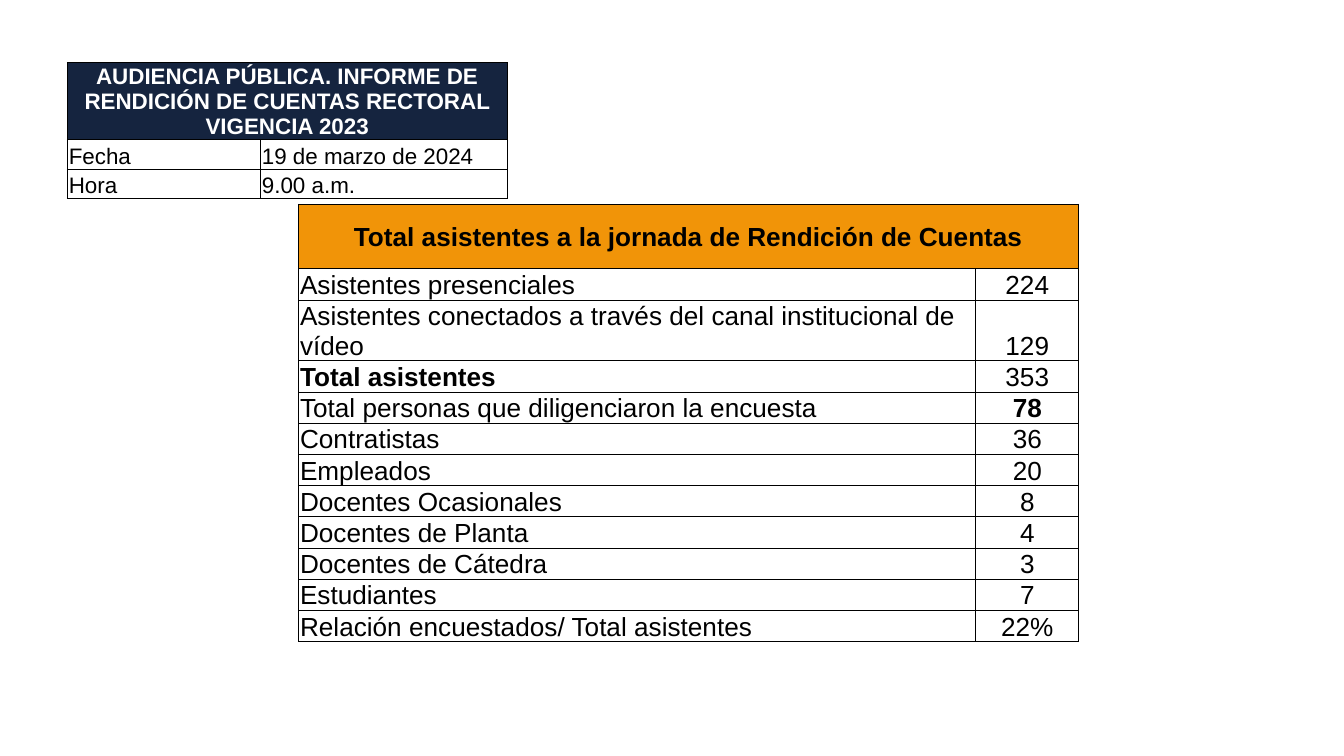
from lxml.etree import SubElement
from pptx import Presentation
from pptx.dml.color import RGBColor
from pptx.enum.text import MSO_ANCHOR, PP_ALIGN
from pptx.oxml.ns import qn
from pptx.util import Cm, Pt

COLORS = {"navy": "15243F", "orange": "F19408", "black": "000000", "white": "FFFFFF"}

ATTENDANCE = {
    "title": "Total asistentes a la jornada de Rendición de Cuentas",
    "rows": [
        ("Asistentes presenciales", "224"),
        ("Asistentes conectados a través del canal institucional de vídeo", "129"),
        ("Total asistentes", "353"),
        ("Total personas que diligenciaron la encuesta", "78"),
        ("Contratistas", "36"),
        ("Empleados", "20"),
        ("Docentes Ocasionales", "8"),
        ("Docentes de Planta", "4"),
        ("Docentes de Cátedra", "3"),
        ("Estudiantes", "7"),
        ("Relación encuestados/ Total asistentes", "22%"),
    ],
    "position": (5.64, 3.86),
    "widths": (12.8, 1.95),
    "heights": [1.22, 0.59, 1.15] + [0.59] * 9,
    "size": 14,
    "fill": "orange",
    "title_color": "black",
    "value_align": PP_ALIGN.CENTER,
    "bold": {"Total asistentes", "78"},
    "top": {"Total asistentes", "Total personas que diligenciaron la encuesta"},
}
HEARING = {
    "title": "AUDIENCIA PÚBLICA. INFORME DE RENDICIÓN DE CUENTAS RECTORAL VIGENCIA 2023",
    "rows": [("Fecha", "19 de marzo de 2024"), ("Hora", "9.00 a.m.")],
    "position": (1.27, 1.18),
    "widths": (3.65, 4.67),
    "heights": [1.44, 0.56, 0.56],
    "size": 12,
    "fill": "navy",
    "title_color": "white",
    "value_align": PP_ALIGN.LEFT,
    "bold": set(),
    "top": set(),
}


def color(name):
    return RGBColor.from_string(COLORS[name])


def add_borders(cell):
    properties = cell._tc.get_or_add_tcPr()
    for index, side in enumerate(("lnL", "lnR", "lnT", "lnB")):
        line = SubElement(properties, qn(f"a:{side}"), w=str(Pt(0.5)))
        fill = SubElement(line, qn("a:solidFill"))
        SubElement(fill, qn("a:srgbClr"), val=COLORS["black"])
        properties.insert(index, line)


def style_cell(cell, text, size, fill, font_color, bold, align, anchor):
    cell.margin_left = cell.margin_right = cell.margin_top = Cm(0.03)
    cell.margin_bottom = 0
    cell.vertical_anchor = anchor
    if fill:
        cell.fill.solid()
        cell.fill.fore_color.rgb = color(fill)
    else:
        cell.fill.background()
    para = cell.text_frame.paragraphs[0]
    para.text = text
    para.alignment = align
    font = para.font
    font.name, font.size, font.bold = "Arial", Pt(size), bold
    font.color.rgb = color(font_color)


def add_summary_table(page, data):
    left, top = data["position"]
    widths, heights = data["widths"], data["heights"]
    table = page.shapes.add_table(
        len(heights), len(widths), Cm(left), Cm(top), Cm(sum(widths)), Cm(sum(heights))
    ).table
    table.horz_banding = False
    for column, width in zip(table.columns, widths):
        column.width = Cm(width)
    for row, height in zip(table.rows, heights):
        row.height = Cm(height)

    # Title across both columns
    title = table.cell(0, 0)
    title.merge(table.cell(0, 1))
    style_cell(title, data["title"], data["size"], data["fill"], data["title_color"],
               True, PP_ALIGN.CENTER, MSO_ANCHOR.MIDDLE)

    # Label and value rows
    for row_index, texts in enumerate(data["rows"], 1):
        for column_index, text in enumerate(texts):
            align = data["value_align"] if column_index else PP_ALIGN.LEFT
            anchor = MSO_ANCHOR.TOP if text in data["top"] else MSO_ANCHOR.BOTTOM
            style_cell(table.cell(row_index, column_index), text, data["size"], None,
                       "black", text in data["bold"], align, anchor)

    for cell in table.iter_cells():
        add_borders(cell)


deck = Presentation()
deck.slide_width, deck.slide_height = Cm(25.4), Cm(14.29)
page = deck.slides.add_slide(deck.slide_layouts[6])
for data in (ATTENDANCE, HEARING):
    add_summary_table(page, data)
deck.save("out.pptx")
